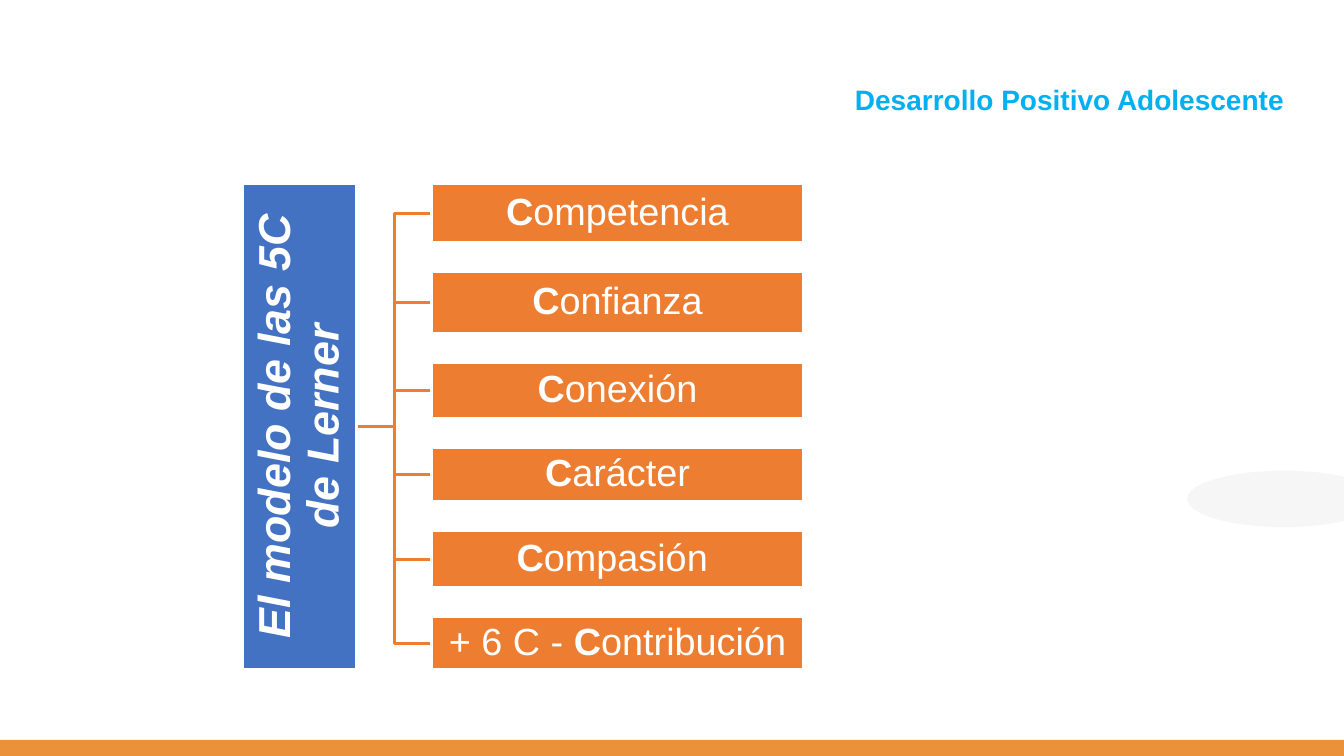
from lxml.etree import SubElement
from pptx import Presentation
from pptx.dml.color import RGBColor as Rgb
from pptx.enum.shapes import MSO_SHAPE as Kind
from pptx.enum.text import MSO_ANCHOR as Anchor
from pptx.enum.text import MSO_AUTO_SIZE as Auto
from pptx.enum.text import PP_ALIGN as Align
from pptx.oxml.ns import qn
from pptx.util import Pt

WHITE, BLUE, ORANGE = "FFFFFF", "4372C3", "ED7D31"


def paint(fmt, code):
    """Give a fill a solid colour."""
    fmt.solid()
    fmt.fore_color.rgb = Rgb.from_string(code)


def apply(item, values):
    for name, value in values.items():
        setattr(item, name, value)


class Deck:
    font = "Arial"
    line = Pt(2)

    def __init__(self, wide, high):
        self.prs = Presentation()
        apply(self.prs, {"slide_width": Pt(wide), "slide_height": Pt(high)})
        self.slide = self.prs.slides.add_slide(self.prs.slide_layouts[5])

    def text(self, shape, runs, size, color, align, anchor, pad, **style):
        """Fill a shape with one paragraph of (words, bold) runs."""
        frame = shape.text_frame
        apply(frame, {
            "word_wrap": True, "auto_size": Auto.NONE,
            "vertical_anchor": anchor,
            "margin_left": Pt(pad[0]), "margin_right": Pt(pad[0]),
            "margin_top": Pt(pad[1]), "margin_bottom": Pt(pad[1]),
        })
        para = frame.paragraphs[0]
        apply(para, {"alignment": align, "line_spacing": 0.9,
                     "space_before": Pt(0)})
        for words, bold in runs:
            run = para.add_run()
            run.text = words
            apply(run.font, {"name": self.font, "size": Pt(size),
                             "bold": bold, **style})
            paint(run.font.fill, color)

    def title(self, words, box, size, color):
        shape = self.slide.shapes.title
        apply(shape, dict(zip(("left", "top", "width", "height"),
                              map(Pt, box))))
        self.text(shape, [(words, True)], size, color,
                  Align.RIGHT, Anchor.TOP, (7.2, 3.6))

    def shape(self, kind, box, fill, edge=None, alpha=None):
        shape = self.slide.shapes.add_shape(kind, *map(Pt, box))
        shape.shadow.inherit = False
        paint(shape.fill, fill)
        if edge:
            paint(shape.line.fill, edge)
            shape.line.width = self.line
        else:
            shape.line.fill.background()
        if alpha:
            tint = shape.element.spPr.find(".//" + qn("a:srgbClr"))
            SubElement(tint, qn("a:alpha"), val=str(alpha * 1000))
        return shape

    def label(self, box, fill, runs, size, turn=0, **style):
        shape = self.shape(Kind.RECTANGLE, box, fill, WHITE)
        shape.rotation = turn
        self.text(shape, runs, size, WHITE, Align.CENTER, Anchor.MIDDLE,
                  (1.4, 1.4), **style)

    def branch(self, points, color):
        """Draw an open line through the points."""
        start, *rest = [(Pt(x), Pt(y)) for x, y in points]
        pen = self.slide.shapes.build_freeform(*start)
        pen.add_line_segments(rest, close=False)
        shape = pen.convert_to_shape()
        shape.shadow.inherit = False
        shape.fill.background()
        paint(shape.line.fill, color)
        shape.line.width = self.line


def main():
    deck = Deck(960, 540)

    # Backdrop
    deck.shape(Kind.OVAL, (848, 336.2, 138.2, 40.3), "F5F5F5", alpha=88)
    deck.shape(Kind.RECTANGLE, (0, 528.4, 960, 11.6), "EA9139")

    # Title
    deck.title("Desarrollo Positivo Adolescente",
               (240.5, 58.3, 684, 66.2), 20, "00B0F0")

    # Rows: height and runs
    rows = [
        (42.5, [("C", True), ("ompetencia", False)]),
        (44.6, [("C", True), ("onfianza", False)]),
        (40.3, [("C", True), ("onexión", False)]),
        (38.9, [("C", True), ("arácter", False)]),
        (41, [("C", True), ("ompasión ", False)]),
        (38.2, [("+ 6 C - ", False), ("C", True), ("ontribución", False)]),
    ]
    root, left, mid = 254.9, 308.2, 304.6
    fork = (root + left) / 2
    top, gap = 131, 20.4
    for high, runs in rows:
        row = top + high / 2
        deck.branch([(root, mid), (fork, mid), (fork, row), (left, row)],
                    ORANGE)
        deck.label((left, top, 265.7, high), ORANGE, runs, 27)
        top += high + gap

    # Model name, turned to read upwards
    wide, high = 347, 81.4
    deck.label((root - (wide + high) / 2, mid - high / 2, wide, high), BLUE,
               [("El modelo de las 5C de Lerner", True)], 32, turn=270,
               italic=True)

    deck.prs.save("out.pptx")


if __name__ == "__main__":
    main()
